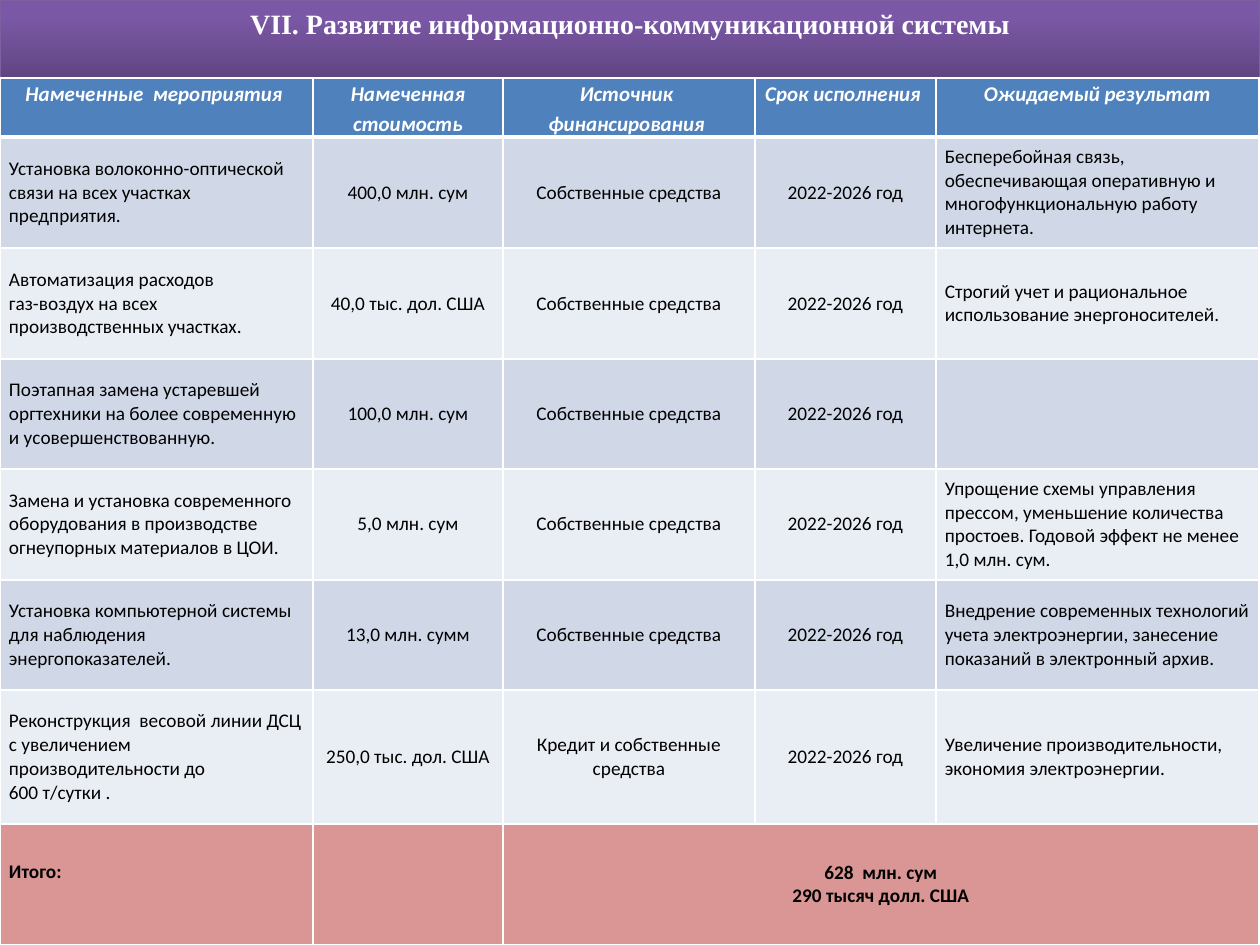
from lxml.etree import SubElement
from pptx import Presentation
from pptx.dml.color import RGBColor as Rgb
from pptx.enum.text import MSO_ANCHOR as Anchor, MSO_AUTO_SIZE as AutoSize, PP_ALIGN as Align
from pptx.oxml import parse_xml
from pptx.oxml.ns import nsdecls, qn
from pptx.util import Pt

PX = 9144000 // 1260  # EMU per px
THEME = {
    "title_font": "Times New Roman", "title_size": 16,
    "font": "Calibri", "head_size": 12, "body_size": 11,
    "white": "FFFFFF", "black": "000000", "title_line": "7D60A0",
    "title_stops": [(0, "5F4480"), (80, "7B58A6"), (100, "7C57A8")],
    "head": "4F81BD", "bands": ["D0D8E8", "E9EDF4"], "total": "D99694",
}
COLUMNS = [313, 190, 252, 181, 323]
ROWS = [59, 111, 111, 110, 111, 110, 134, 121]
OWN, TERM = "Собственные средства", "2022-2026 год"
HEADINGS = ["Намеченные  мероприятия ", "Намеченная\nстоимость", "Источник  финансирования ",
            "Срок исполнения ", "Ожидаемый результат"]
MEASURES = [
    ["Установка волоконно-оптической связи на всех участках предприятия.",
     "400,0 млн. сум", OWN, TERM,
     "Бесперебойная связь, обеспечивающая оперативную и многофункциональную работу интернета."],
    ["Автоматизация расходов\nгаз-воздух на всех производственных участках.",
     "40,0 тыс. дол. США", OWN, TERM,
     "Строгий учет и рациональное использование энергоносителей."],
    ["Поэтапная замена устаревшей оргтехники на более современную и усовершенствованную.",
     "100,0 млн. сум", OWN, TERM, ""],
    ["Замена и установка современного оборудования в производстве огнеупорных материалов в ЦОИ.",
     "5,0 млн. сум", OWN, TERM,
     "Упрощение схемы управления прессом, уменьшение количества простоев. "
     "Годовой эффект не менее 1,0 млн. сум."],
    ["Установка компьютерной системы для наблюдения  энергопоказателей.",
     "13,0 млн. сумм", OWN, TERM,
     "Внедрение современных технологий учета электроэнергии, "
     "занесение показаний в электронный архив."],
    ["Реконструкция  весовой линии ДСЦ с увеличением производительности до\n600 т/сутки .",
     "250,0 тыс. дол. США", "Кредит и собственные средства", TERM,
     "Увеличение производительности, экономия электроэнергии."],
]
TOTAL = ["Итого:", "", "628  млн. сум\n290 тысяч долл. США", "", ""]


def write(frame, text, font, size, color, align, bold=False, italic=False, spacing=1.0):
    for index, line in enumerate(text.split("\n")):
        para = frame.paragraphs[0] if index == 0 else frame.add_paragraph()
        para.alignment, para.line_spacing = align, spacing
        span = para.add_run()
        span.text = line
        span.font.name, span.font.size = font, Pt(size)
        span.font.bold, span.font.italic = bold, italic
        span.font.color.rgb = Rgb.from_string(color)


def add_borders(cell, bottom):
    props = cell._tc.get_or_add_tcPr()
    for index, side in enumerate(["lnL", "lnR", "lnT", "lnB"]):
        width = bottom if side == "lnB" else 1
        line = parse_xml(f'<a:{side} {nsdecls("a")} w="{Pt(width)}"><a:solidFill>'
                         f'<a:srgbClr val="{THEME["white"]}"/></a:solidFill></a:{side}>')
        props.insert(index, line)


deck = Presentation()
deck.slide_width, deck.slide_height = 1260 * PX, 945 * PX
page = deck.slides.add_slide(deck.slide_layouts[5])

# Title band with gradient, outline and soft shadow
title = page.shapes.title
title.left, title.top, title.width, title.height = 0, 0, 1260 * PX, 81 * PX
stops = "".join(f'<a:gs pos="{pos * 1000}"><a:srgbClr val="{color}"/></a:gs>'
                for pos, color in THEME["title_stops"])
title_props = title._element.spPr
title_props.append(parse_xml(f'<a:gradFill {nsdecls("a")} rotWithShape="1"><a:gsLst>{stops}</a:gsLst>'
                             '<a:lin ang="16200000" scaled="0"/></a:gradFill>'))
title.line.color.rgb = Rgb.from_string(THEME["title_line"])
title.line.width = Pt(0.75)
effects = SubElement(title_props, qn("a:effectLst"))
effects.append(parse_xml(f'<a:outerShdw {nsdecls("a")} blurRad="{Pt(3.1)}" dist="{Pt(1.8)}" '
                         f'dir="5400000" rotWithShape="0"><a:srgbClr val="{THEME["black"]}">'
                         '<a:alpha val="35000"/></a:srgbClr></a:outerShdw>'))
frame = title.text_frame
frame.word_wrap, frame.auto_size, frame.vertical_anchor = True, AutoSize.NONE, Anchor.TOP
write(frame, "VII. Развитие информационно-коммуникационной системы", THEME["title_font"],
      THEME["title_size"], THEME["white"], Align.CENTER, bold=True)

# Table grid
table = page.shapes.add_table(len(ROWS), len(COLUMNS), 0, 78 * PX,
                              sum(COLUMNS) * PX, sum(ROWS) * PX).table
for column, width in zip(table.columns, COLUMNS):
    column.width = width * PX
for row, height in zip(table.rows, ROWS):
    row.height = height * PX
last = len(ROWS) - 1
table.cell(last, 2).merge(table.cell(last, 4))

# Table cells
for r, texts in enumerate([HEADINGS, *MEASURES, TOTAL]):
    is_head, is_total = r == 0, r == last
    fill = THEME["head"] if is_head else THEME["total"] if is_total else THEME["bands"][(r - 1) % 2]
    for c, text in enumerate(texts):
        cell = table.cell(r, c)
        cell.margin_left = cell.margin_right = 9 * PX
        cell.margin_top = cell.margin_bottom = 0
        cell.vertical_anchor = Anchor.TOP if is_head else Anchor.MIDDLE
        cell.fill.solid()
        cell.fill.fore_color.rgb = Rgb.from_string(fill)
        add_borders(cell, 3 if is_head else 1)
        if text:
            centred = is_head or c in (1, 2, 3)
            write(cell.text_frame, text, THEME["font"],
                  THEME["head_size"] if is_head else THEME["body_size"],
                  THEME["white"] if is_head else THEME["black"],
                  Align.CENTER if centred else Align.LEFT,
                  bold=is_head or is_total, italic=is_head, spacing=1.15 if is_head else 1.0)

# The total label lines up with the first amount
table.cell(last, 0).margin_bottom = 24 * PX

deck.save("out.pptx")
